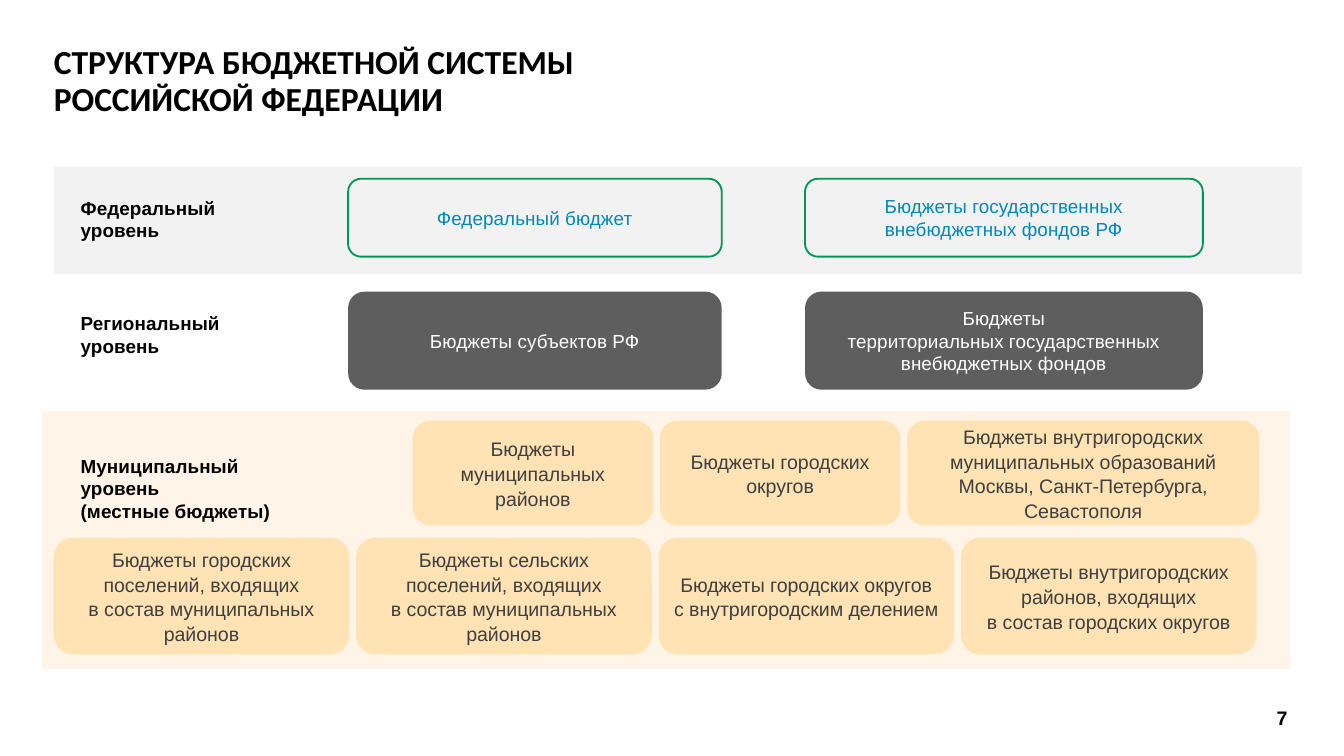
from copy import deepcopy
from dataclasses import dataclass

from pptx import Presentation
from pptx.dml.color import RGBColor
from pptx.enum.shapes import MSO_SHAPE
from pptx.enum.text import MSO_ANCHOR, PP_ALIGN
from pptx.oxml.ns import qn
from pptx.util import Inches, Pt

RECTANGLE = MSO_SHAPE.RECTANGLE
ROUNDED = MSO_SHAPE.ROUNDED_RECTANGLE
TOP, MIDDLE = MSO_ANCHOR.TOP, MSO_ANCHOR.MIDDLE
LEFT, CENTER = PP_ALIGN.LEFT, PP_ALIGN.CENTER


@dataclass(frozen=True)
class Theme:
    """Colours, fonts and type sizes of the slide."""
    black: str = "000000"
    white: str = "FFFFFF"
    gray_band: str = "F2F2F2"
    cream_band: str = "FFF4E7"
    green: str = "009655"
    blue: str = "0087BA"
    dark_gray: str = "5E5E5E"
    sand: str = "FFE3B4"
    charcoal: str = "3F3F3F"
    heading_font: str = "Calibri"
    body_font: str = "Arial"
    title_size: float = 18
    level_size: float = 10.13
    municipal_size: float = 10.5


THEME = Theme()


def write_text(box, text, size, color=THEME.black, font=THEME.body_font, bold=False,
               align=LEFT, anchor=TOP, spacing=None):
    """Write one paragraph, with line breaks at newlines, into a box."""
    frame = box.text_frame
    frame.word_wrap = True
    frame.vertical_anchor = anchor
    frame.margin_left = frame.margin_right = Inches(0.07)
    frame.margin_top = frame.margin_bottom = Inches(0.04)
    para = frame.paragraphs[0]
    para.text = text.replace("\n", "\v")
    para.alignment = align
    if spacing:
        para.line_spacing = spacing
    for span in para.runs:
        span.font.name = font
        span.font.size = Pt(size)
        span.font.bold = bold
        span.font.color.rgb = RGBColor.from_string(color)
    for line_break in para._p.findall(qn("a:br")):
        line_break.insert(0, deepcopy(para.runs[0]._r.rPr))


def add_label(page, left, top, width, height, text, size, **text_format):
    """Add a bold text box."""
    box = page.shapes.add_textbox(Inches(left), Inches(top), Inches(width), Inches(height))
    write_text(box, text, size, bold=True, **text_format)


def add_panel(page, kind, left, top, width, height, fill=None, line=None):
    """Add a flat shape with an optional fill and outline."""
    panel = page.shapes.add_shape(kind, Inches(left), Inches(top), Inches(width), Inches(height))
    panel.shadow.inherit = False
    if fill:
        panel.fill.solid()
        panel.fill.fore_color.rgb = RGBColor.from_string(fill)
    else:
        panel.fill.background()
    if line:
        panel.line.color.rgb = RGBColor.from_string(line)
        panel.line.width = Pt(1)
    else:
        panel.line.fill.background()
    return panel


def add_budget_row(page, left, top, height, gap, budgets, size, color,
                   fill=None, line=None, spacing=None):
    """Add rounded budget cards from left to right with equal gaps."""
    for width, text in budgets:
        card = add_panel(page, ROUNDED, left, top, width, height, fill, line)
        write_text(card, text, size, color, align=CENTER, anchor=MIDDLE, spacing=spacing)
        left += width + gap


def main():
    """Build the slide on the levels of the budget system."""
    deck = Presentation()
    deck.slide_width = Inches(10)
    deck.slide_height = deck.slide_width * 9 // 16
    page = deck.slides.add_slide(deck.slide_layouts[6])

    add_panel(page, RECTANGLE, 0.31, 3.06, 9.29, 1.92, THEME.cream_band)
    add_panel(page, RECTANGLE, 0.4, 1.24, 9.29, 0.8, THEME.gray_band)

    levels = [
        (1.42, 0.42, "Федеральный уровень"),
        (2.28, 0.42, "Региональный уровень"),
        (3.34, 0.59, "Муниципальный уровень\n(местные бюджеты)"),
    ]
    for top, height, text in levels:
        add_label(page, 0.53, top, 1.65, height, text, THEME.level_size)

    federal = [
        (2.78, "Федеральный бюджет"),
        (2.96, "Бюджеты государственных внебюджетных фондов РФ"),
    ]
    regional = [
        (2.78, "Бюджеты субъектов РФ"),
        (2.96, "Бюджеты\nтерриториальных государственных внебюджетных фондов"),
    ]
    add_budget_row(page, 2.59, 1.33, 0.58, 0.62, federal, THEME.level_size,
                   THEME.blue, line=THEME.green)
    add_budget_row(page, 2.59, 2.17, 0.73, 0.62, regional, THEME.level_size,
                   THEME.white, fill=THEME.dark_gray)

    districts = [
        (1.79, "Бюджеты муниципальных районов"),
        (1.79, "Бюджеты городских округов"),
        (2.62, "Бюджеты внутригородских муниципальных образований "
               "Москвы, Санкт-Петербурга, Севастополя"),
    ]
    settlements = [(2.2, text) for text in (
        "Бюджеты городских поселений, входящих\nв состав муниципальных районов",
        "Бюджеты сельских поселений, входящих\nв состав муниципальных районов",
        "Бюджеты городских округов с внутригородским делением",
        "Бюджеты внутригородских районов, входящих\nв состав городских округов",
    )]
    for left, top, height, budgets in ((3.07, 3.13, 0.78, districts),
                                       (0.4, 4, 0.87, settlements)):
        add_budget_row(page, left, top, height, 0.05, budgets, THEME.municipal_size,
                       THEME.charcoal, fill=THEME.sand, spacing=1.05)

    add_label(page, 0.33, 0.3, 8.62, 0.69,
              "СТРУКТУРА БЮДЖЕТНОЙ СИСТЕМЫ\nРОССИЙСКОЙ ФЕДЕРАЦИИ",
              THEME.title_size, font=THEME.heading_font, spacing=0.9)
    add_label(page, 9.14, 5.19, 0.8, 0.3, "7", THEME.municipal_size,
              align=CENTER, anchor=MIDDLE)
    deck.save("out.pptx")


if __name__ == "__main__":
    main()
